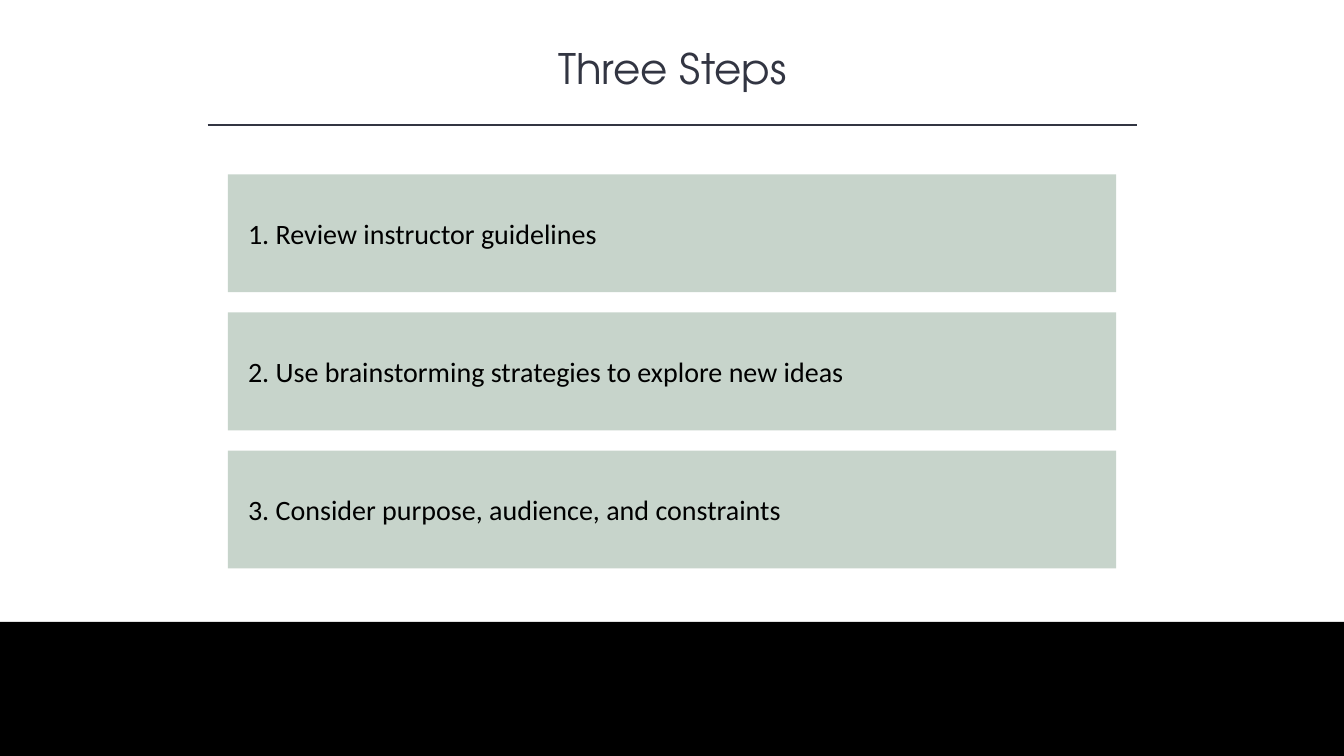
from dataclasses import dataclass

from lxml import etree
from pptx import Presentation
from pptx.dml.color import RGBColor
from pptx.enum.shapes import MSO_CONNECTOR, MSO_SHAPE
from pptx.enum.text import MSO_ANCHOR, PP_ALIGN
from pptx.oxml.ns import qn
from pptx.util import Inches, Pt

RECT = MSO_SHAPE.RECTANGLE
STRAIGHT = MSO_CONNECTOR.STRAIGHT
MIDDLE = MSO_ANCHOR.MIDDLE
LEFT, CENTER = PP_ALIGN.LEFT, PP_ALIGN.CENTER
TITLE_ONLY = 5

STEPS = [
    "1. Review instructor guidelines",
    "2. Use brainstorming strategies to explore new ideas",
    "3. Consider purpose, audience, and constraints",
]
STEP_TOP, STEP_HEIGHT, STEP_GAP = 1.73, 1.17, 0.2


@dataclass(frozen=True)
class Theme:
    ink: RGBColor = RGBColor(0x32, 0x35, 0x42)
    sage: RGBColor = RGBColor(0xC7, 0xD4, 0xCB)
    black: RGBColor = RGBColor(0, 0, 0)
    white: RGBColor = RGBColor(0xFF, 0xFF, 0xFF)
    title_font: str = "TeX Gyre Adventor"
    body_font: str = "Calibri"
    title_size: Pt = Pt(30)
    body_size: Pt = Pt(20)
    rule_width: Pt = Pt(1)


class SlideBuilder:
    def __init__(self, slide, theme):
        self.s = slide
        self.theme = theme
        fill = slide.background.fill
        fill.solid()
        fill.fore_color.rgb = theme.white

    def set_text(self, sp, text, font, align, inset):
        """Put one vertically centred line of text in a shape."""
        tf = sp.text_frame
        frame = {"word_wrap": True, "vertical_anchor": MIDDLE,
                 "margin_left": Inches(inset), "margin_right": Inches(inset),
                 "margin_top": Inches(0.05), "margin_bottom": Inches(0.05)}
        for name, value in frame.items():
            setattr(tf, name, value)
        p = tf.paragraphs[0]
        p.alignment = align
        r = p.add_run()
        r.text = text
        for name, value in font.items():
            if name == "color":
                r.font.color.rgb = value
            else:
                setattr(r.font, name, value)

    def title(self, text, left, top, width, height):
        sp = self.s.shapes.title
        box = {"left": left, "top": top, "width": width, "height": height}
        for name, value in box.items():
            setattr(sp, name, Inches(value))
        t = self.theme
        font = {"name": t.title_font, "size": t.title_size, "color": t.ink}
        self.set_text(sp, text, font, CENTER, 0.1)

    def rule(self, left, right, y):
        """Draw a horizontal line."""
        line = self.s.shapes.add_connector(
            STRAIGHT, Inches(left), Inches(y), Inches(right), Inches(y))
        line.line.color.rgb = self.theme.ink
        line.line.width = self.theme.rule_width
        etree.SubElement(line._element.spPr, qn("a:effectLst"))

    def block(self, color, left, top, width, height):
        sp = self.s.shapes.add_shape(
            RECT, Inches(left), Inches(top), Inches(width), Inches(height))
        sp.shadow.inherit = False
        sp.fill.solid()
        sp.fill.fore_color.rgb = color
        sp.line.fill.background()
        return sp

    def step(self, text, top):
        t = self.theme
        sp = self.block(t.sage, 2.26, top, 8.81, STEP_HEIGHT)
        font = {"name": t.body_font, "size": t.body_size, "color": t.black}
        self.set_text(sp, text, font, LEFT, 0.2)


def main():
    prs = Presentation()
    prs.slide_width, prs.slide_height = Inches(13.33), Inches(7.5)
    theme = Theme()
    slide = SlideBuilder(
        prs.slides.add_slide(prs.slide_layouts[TITLE_ONLY]), theme)

    slide.title("Three Steps", 1.67, 0.37, 10, 0.61)
    slide.rule(2.06, 11.28, 1.24)
    for i, text in enumerate(STEPS):
        slide.step(text, STEP_TOP + i * (STEP_HEIGHT + STEP_GAP))
    slide.block(theme.black, 0, 6.17, 13.33, 1.33)

    prs.save("out.pptx")


if __name__ == "__main__":
    main()
